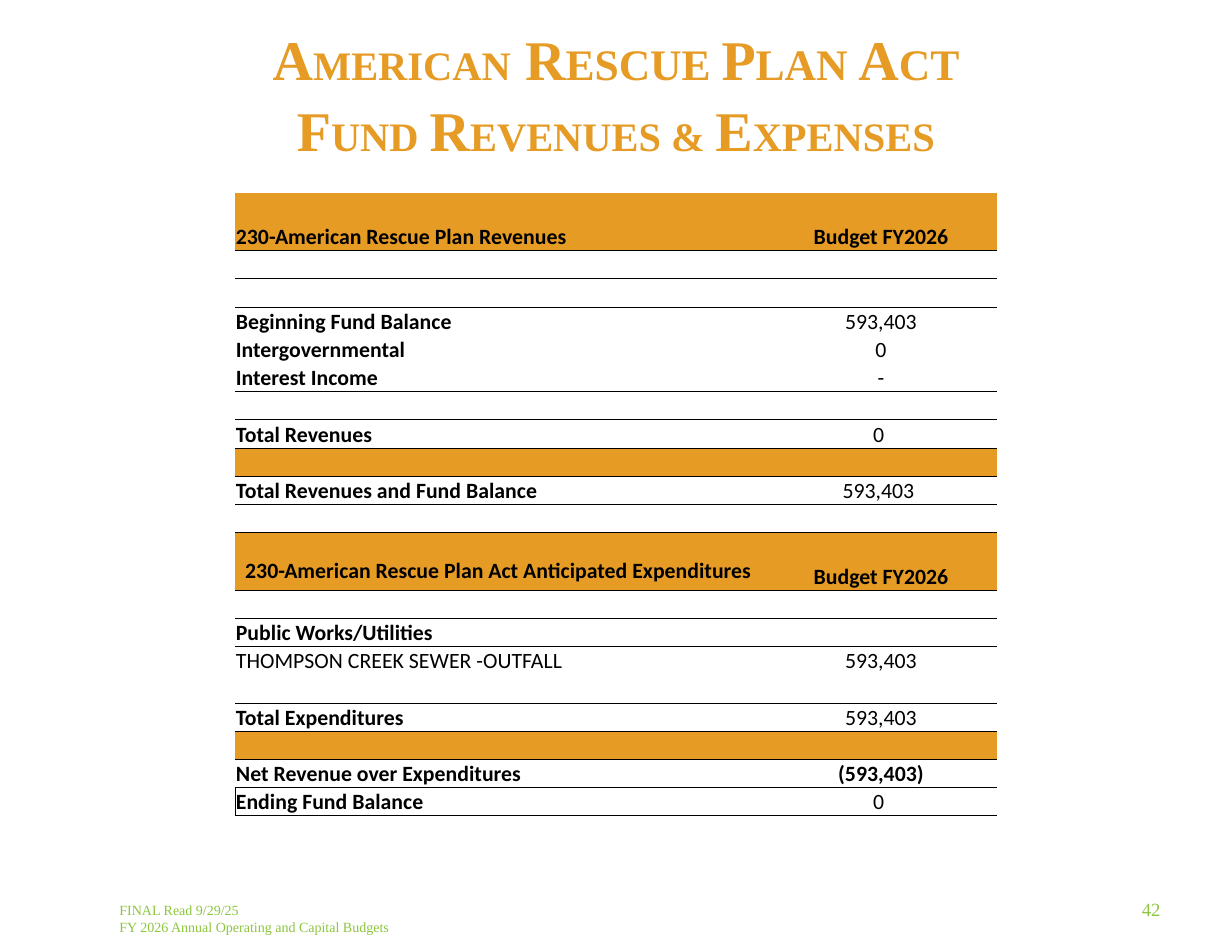
from lxml import etree
from pptx import Presentation
from pptx.dml.color import RGBColor
from pptx.enum.text import MSO_ANCHOR, PP_ALIGN
from pptx.oxml.ns import qn
from pptx.util import Cm, Pt

LEFT, CENTER, RIGHT = PP_ALIGN.LEFT, PP_ALIGN.CENTER, PP_ALIGN.RIGHT
TOP, BOTTOM = MSO_ANCHOR.TOP, MSO_ANCHOR.BOTTOM

ORANGE = RGBColor(0xE5, 0x9B, 0x24)
GREEN = RGBColor(0x8D, 0xC6, 0x3F)
BLACK = RGBColor(0, 0, 0)

SERIF, SANS = "Times New Roman", "Calibri"
NO_STYLE = "{2D5ABB26-0587-4C30-8999-92F81FD0307C}"

HEADER, BAND, PLAIN = "header", "band", "plain"
# kind, label, value, label bold, value bold, rule below
ROWS = [
    (HEADER, "230-American Rescue Plan Revenues", "Budget FY2026", True, True, True),
    (PLAIN, "", "", False, False, True),
    (PLAIN, "", "", False, False, False),
    (PLAIN, "Beginning Fund Balance", "593,403", True, False, False),
    (PLAIN, "Intergovernmental", "0", True, False, False),
    (PLAIN, "Interest Income", "-", True, False, True),
    (PLAIN, "", "", False, False, False),
    (PLAIN, "Total Revenues", "0 ", True, False, True),
    (BAND, "", "", False, False, False),
    (PLAIN, "Total Revenues and Fund Balance", "593,403 ", True, False, True),
    (PLAIN, "", "", False, False, False),
    (HEADER, "230-American Rescue Plan Act Anticipated Expenditures",
     "Budget FY2026", True, True, True),
    (PLAIN, "", "", False, False, True),
    (PLAIN, "Public Works/Utilities", "", True, False, False),
    (PLAIN, "THOMPSON CREEK SEWER -OUTFALL", "593,403", False, False, False),
    (PLAIN, "", "", False, False, True),
    (PLAIN, "Total Expenditures", "593,403", True, False, True),
    (BAND, "", "", False, False, False),
    (PLAIN, "Net Revenue over Expenditures", "(593,403)", True, True, True),
    (PLAIN, "Ending Fund Balance", "0 ", True, False, True),
]
EXPENDITURE_HEADER = 11

TITLE = [
    [("A", 36), ("MERICAN", 26), (" R", 36), ("ESCUE ", 28), ("P", 36),
     ("LAN ", 28), ("A", 36), ("CT", 28)],
    [("F", 36), ("UND", 26), (" ", 28), ("R", 36), ("EVENUES & ", 26),
     ("E", 36), ("XPENSES", 26)],
]


class BudgetSlide:
    def __init__(self, slide):
        self.slide = slide

    def style(self, p, font, size, color, bold=False, align=LEFT):
        p.alignment = align
        p.font.name, p.font.size, p.font.bold = font, Pt(size), bold
        p.font.color.rgb = color

    def box(self, x, y, w, h, anchor=TOP, margins=(0.25, 0.13, 0.25, 0.13)):
        """Add an empty text box; lengths in cm, margins left, top, right, bottom."""
        tf = self.slide.shapes.add_textbox(Cm(x), Cm(y), Cm(w), Cm(h)).text_frame
        tf.word_wrap = True
        tf.vertical_anchor = anchor
        (tf.margin_left, tf.margin_top,
         tf.margin_right, tf.margin_bottom) = (Cm(m) for m in margins)
        return tf

    def title(self, lines):
        tf = self.box(0, 0.46, 27.94, 3.33, BOTTOM, (0.1, 0.1, 0.1, 0.1))
        for i, line in enumerate(lines):
            p = tf.add_paragraph() if i else tf.paragraphs[0]
            self.style(p, SERIF, 36, ORANGE, True, CENTER)
            if i:
                p.space_before = Pt(2.5)
            for text, size in line:
                r = p.add_run()
                r.text = text
                r.font.size = Pt(size)

    def footer(self, lines):
        tf = self.box(2.46, 20.32, 7.65, 1.27)
        for i, line in enumerate(lines):
            p = tf.add_paragraph() if i else tf.paragraphs[0]
            p.text = line
            self.style(p, SERIF, 9, GREEN)

    def page_number(self, number):
        tf = self.box(25.3, 19.86, 1.27, 1.47, margins=(0.25, 0.61, 0.25, 0.13))
        p = tf.paragraphs[0]
        p.text = str(number)
        self.style(p, SERIF, 12, GREEN, align=RIGHT)

    def borders(self, cell, edges):
        """Draw thin black lines on the named edges, given in L, R, T, B order."""
        tcPr = cell._tc.get_or_add_tcPr()
        for edge in edges:
            ln = etree.SubElement(tcPr, qn(f"a:ln{edge}"), w=str(Pt(0.5)))
            fill = etree.SubElement(ln, qn("a:solidFill"))
            etree.SubElement(fill, qn("a:srgbClr"), val=str(BLACK))

    def cell(self, cell, text, bold, align, edges, filled):
        self.borders(cell, edges)
        if filled:
            cell.fill.solid()
            cell.fill.fore_color.rgb = ORANGE
        else:
            cell.fill.background()
        cell.vertical_anchor = BOTTOM
        cell.margin_left = cell.margin_right = cell.margin_top = Cm(0.02)
        cell.margin_bottom = 0
        p = cell.text_frame.paragraphs[0]
        if text:
            p.text = text
        else:
            # keeps an empty cell from stretching its row
            etree.SubElement(p._p, qn("a:endParaRPr"), sz="1000")
        self.style(p, SANS, 14 if text else 10, BLACK, bold, align)

    def budget_table(self, rows):
        widths = (9.65, 2.36, 5.28)
        heights = [1.3 if row[0] == HEADER else 0.64 for row in rows]
        table = self.slide.shapes.add_table(
            len(rows), len(widths), Cm(5.33), Cm(4.38),
            Cm(sum(widths)), Cm(sum(heights))).table
        table.first_row = table.horz_banding = False
        table._tbl.tblPr.find(qn("a:tableStyleId")).text = NO_STYLE
        for column, width in zip(table.columns, widths):
            column.width = Cm(width)

        ruled_above = False
        for i, (kind, label, value, label_bold, value_bold, ruled) in enumerate(rows):
            table.rows[i].height = Cm(heights[i])
            edges = "T" * ruled_above + "B" * ruled
            contents = ((label, label_bold, LEFT), ("", False, LEFT),
                        (value, value_bold, CENTER))
            for j, (text, bold, align) in enumerate(contents):
                left = "L" if i == len(rows) - 1 and j == 0 else ""
                self.cell(table.cell(i, j), text, bold, align,
                          left + edges, kind != PLAIN)
            ruled_above = ruled

        wide = table.cell(EXPENDITURE_HEADER, 0)
        wide.merge(table.cell(EXPENDITURE_HEADER, 1))
        wide.margin_left = wide.margin_right = Cm(0.23)
        wide.margin_top = wide.margin_bottom = Cm(0.13)


def main():
    prs = Presentation()
    prs.slide_width, prs.slide_height = Cm(27.94), Cm(21.59)
    s = BudgetSlide(prs.slides.add_slide(prs.slide_layouts[6]))
    s.page_number(42)
    s.footer(["FINAL Read 9/29/25", "FY 2026 Annual Operating and Capital Budgets"])
    s.title(TITLE)
    s.budget_table(ROWS)
    prs.save("out.pptx")


if __name__ == "__main__":
    main()
